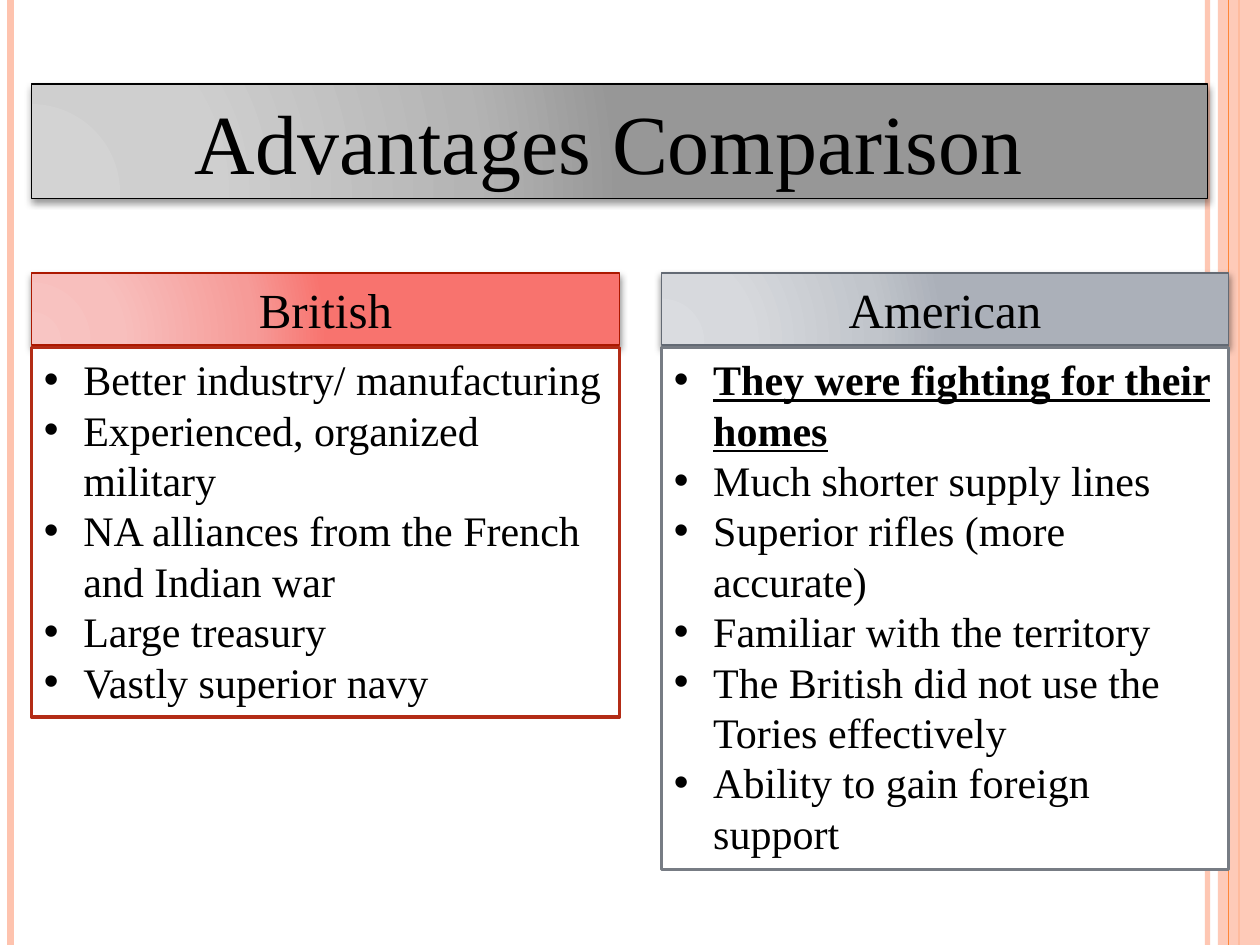
from lxml.etree import SubElement
from pptx import Presentation
from pptx.dml.color import RGBColor
from pptx.enum.shapes import MSO_CONNECTOR as Connector, MSO_SHAPE as Shape
from pptx.enum.text import MSO_ANCHOR as Anchor, MSO_AUTO_SIZE as AutoSize, PP_ALIGN as Align
from pptx.oxml.ns import qn
from pptx.util import Pt

FONT = "Times New Roman"
WIDTH, HEIGHT = 720, 540
PALE, ORANGE = "FEC3AE", "FE8637"
STOPS = (0, 30, 75, 100)
HEADING_TOP, HEADING_HEIGHT, LIST_TOP = 156, 41.2, 198.6

COLUMNS = [
    {
        "title": "British", "left": 18, "width": 336, "height": 211.2,
        "gradient": ("F8C5C3", "F8BFBD", "F69B98", "F8736E"),
        "heading_line": "AC1800", "list_line": "B32C16", "stressed": 0,
        "items": [
            "Better industry/ manufacturing",
            "Experienced, organized military",
            "NA alliances from the French and Indian war",
            "Large treasury",
            "Vastly superior navy",
        ],
    },
    {
        "title": "American", "left": 378, "width": 324, "height": 298.2,
        "gradient": ("DADCE0", "D7D9DD", "C1C5CB", "ABB0B9"),
        "heading_line": "636A74", "list_line": "777C84", "stressed": 1,
        "items": [
            "They were fighting for their homes",
            "Much shorter supply lines",
            "Superior rifles (more accurate)",
            "Familiar with the territory",
            "The British did not use the Tories effectively",
            "Ability to gain foreign support",
        ],
    },
]


def color(value):
    return RGBColor.from_string(value)


def add_element(parent, tag, **attributes):
    return SubElement(parent, qn(tag), {key: str(value) for key, value in attributes.items()})


def set_alpha(fill_owner, percent):
    for solid_color in fill_owner.iter(qn("a:srgbClr")):
        add_element(solid_color, "a:alpha", val=percent * 1000)


def add_stripe(slide, x, line_color, weight, opacity=100):
    stripe = slide.shapes.add_connector(Connector.STRAIGHT, Pt(x), Pt(0), Pt(x), Pt(HEIGHT))
    stripe.line.color.rgb = color(line_color)
    stripe.line.width = Pt(weight)
    properties = stripe._element.spPr
    if opacity < 100:
        set_alpha(properties, opacity)
    add_element(properties, "a:effectLst")


def add_rectangle(slide, left, top, width, height, fill_color):
    shape = slide.shapes.add_shape(Shape.RECTANGLE, Pt(left), Pt(top), Pt(width), Pt(height))
    shape.shadow.inherit = False
    shape.fill.solid()
    shape.fill.fore_color.rgb = color(fill_color)
    shape.line.fill.background()
    return shape


def add_side_band(slide):
    band = add_rectangle(slide, 696, 0, WIDTH - 696, HEIGHT, PALE)
    set_alpha(band._element.spPr, 87)


def add_text_panel(slide, left, top, width, height, line_color, line_width):
    panel = add_rectangle(slide, left, top, width, height, "FFFFFF")
    panel.line.color.rgb = color(line_color)
    panel.line.width = Pt(line_width)
    frame = panel.text_frame
    frame.word_wrap = True
    frame.auto_size = AutoSize.SHAPE_TO_FIT_TEXT
    frame.vertical_anchor = Anchor.TOP
    return panel


def add_run(paragraph, text, size, stressed=False):
    run = paragraph.add_run()
    run.text = text
    run.font.name = FONT
    run.font.size = Pt(size)
    run.font.color.rgb = color("000000")
    if stressed:
        run.font.bold = True
        run.font.underline = True


def set_gradient(shape, colors):
    properties = shape._element.spPr
    gradient = add_element(properties, "a:gradFill", rotWithShape=1)
    stops = add_element(gradient, "a:gsLst")
    for position, value in zip(STOPS, colors):
        stop = add_element(stops, "a:gs", pos=position * 1000)
        add_element(stop, "a:srgbClr", val=value)
    circle = add_element(gradient, "a:path", path="circle")
    add_element(circle, "a:fillToRect", l=5000, t=100000, r=120000, b=10000)
    properties.replace(properties.find(qn("a:solidFill")), gradient)


def set_shadow(shape):
    effects = shape._element.spPr.find(qn("a:effectLst"))
    shadow = add_element(effects, "a:outerShdw", blurRad=Pt(4), dist=Pt(2),
                         dir=90 * 60000, rotWithShape=0)
    add_element(shadow, "a:srgbClr", val="000000")
    set_alpha(shadow, 40)


def add_heading(slide, text, size, left, top, width, height, colors, line_color):
    heading = add_text_panel(slide, left, top, width, height, line_color, 1)
    set_gradient(heading, colors)
    set_shadow(heading)
    paragraph = heading.text_frame.paragraphs[0]
    paragraph.alignment = Align.CENTER
    add_run(paragraph, text, size)


def set_bullet(paragraph):
    properties = paragraph._p.get_or_add_pPr()
    properties.set("marL", str(Pt(22.5)))
    properties.set("indent", str(-Pt(22.5)))
    add_element(properties, "a:buFont", typeface="Arial")
    add_element(properties, "a:buChar", char="•")


def add_bullet_list(slide, column):
    panel = add_text_panel(slide, column["left"], LIST_TOP, column["width"],
                           column["height"], column["list_line"], 2)
    frame = panel.text_frame
    for index, item in enumerate(column["items"]):
        paragraph = frame.add_paragraph() if index else frame.paragraphs[0]
        paragraph.alignment = Align.LEFT
        set_bullet(paragraph)
        add_run(paragraph, item, 24, index < column["stressed"])


def add_column(slide, column):
    add_heading(slide, column["title"], 28, column["left"], HEADING_TOP, column["width"],
                HEADING_HEIGHT, column["gradient"], column["heading_line"])
    add_bullet_list(slide, column)


def add_border(slide):
    add_stripe(slide, 690, PALE, 3, 93)
    add_stripe(slide, 6, PALE, 4.5)
    add_stripe(slide, 708, ORANGE, 1.5)
    add_side_band(slide)
    add_stripe(slide, 702, ORANGE, 0.75)


def main():
    presentation = Presentation()
    presentation.slide_width, presentation.slide_height = Pt(WIDTH), Pt(HEIGHT)
    slide = presentation.slides.add_slide(presentation.slide_layouts[6])
    add_border(slide)
    add_heading(slide, "Advantages Comparison ", 48, 18, 48, 672, 65.4,
                ("D3D3D3", "CFCFCF", "B4B4B4", "979797"), "000000")
    for column in COLUMNS:
        add_column(slide, column)
    presentation.save("out.pptx")


if __name__ == "__main__":
    main()
